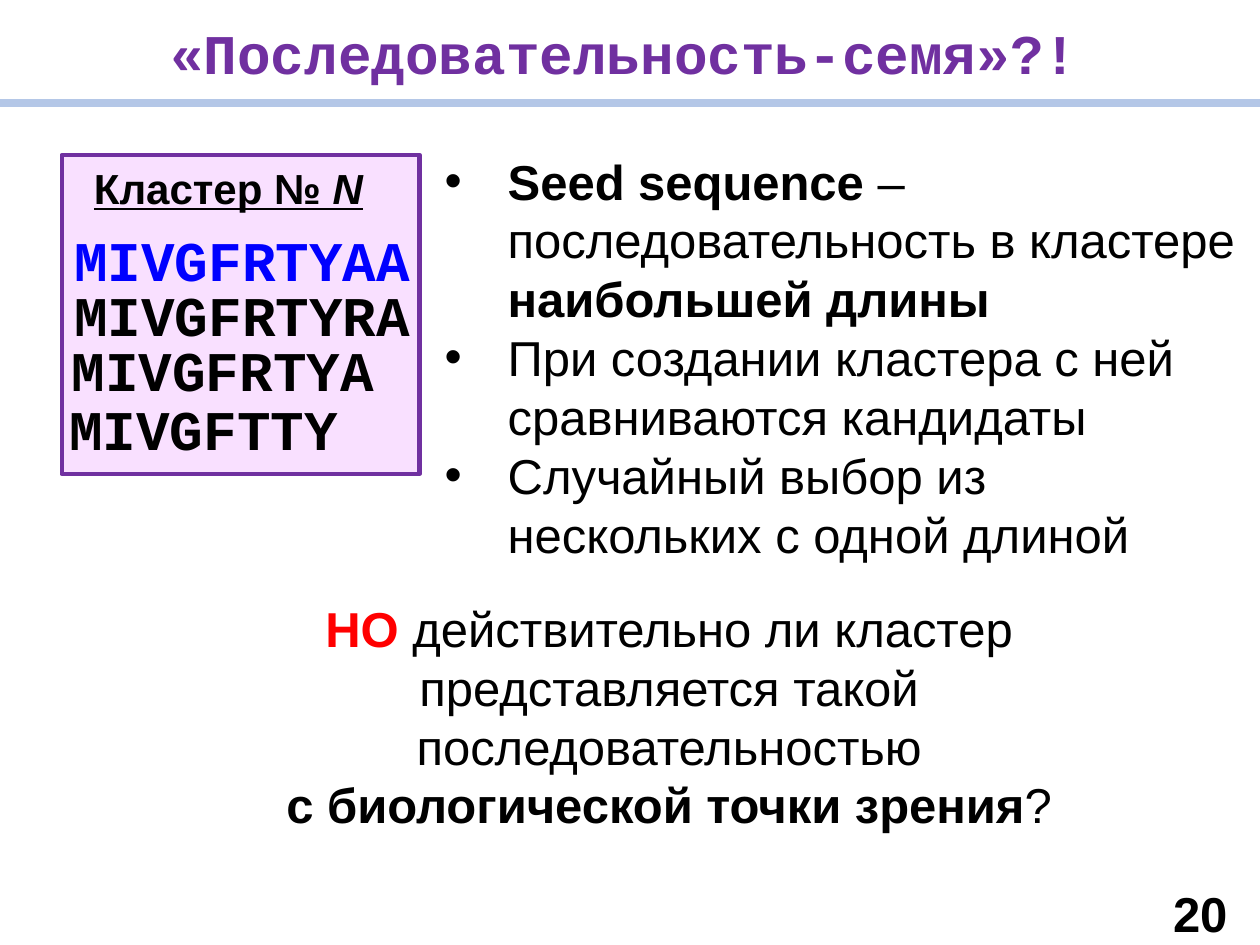
from lxml import etree
from pptx import Presentation
from pptx.dml.color import RGBColor
from pptx.enum import shapes, text
from pptx.oxml.ns import qn
from pptx.util import Pt

BLACK = RGBColor(0, 0, 0)
BLUE = RGBColor(0, 0, 0xFF)
RED = RGBColor(0xFF, 0, 0)
PURPLE = RGBColor(0x70, 0x30, 0xA0)
PINK = RGBColor(0xE2, 0x67, 0xFF)
RULE = RGBColor(0xB4, 0xC7, 0xE7)
SANS, MONO = "Arial", "Courier New"

# Content: a paragraph is a list of (text, font settings)
BOLD = {"bold": True}
TITLE = "«Последовательность-семя»?!"
HEAD = [[("Кластер № ", {}), ("N", {"italic": True})]]
SEQS = [  # text, left, top, colour
    ("MIVGFRTYAA", 35.3, 125.3, BLUE),
    ("MIVGFRTYRA", 35.3, 157, BLACK),
    ("MIVGFRTYA", 33.8, 187.9, BLACK),
    ("MIVGFTTY", 32.4, 221.8, BLACK),
]
POINTS = [
    [("Seed sequence ", BOLD), ("– последовательность в кластере ", {}),
     ("наибольшей длины", BOLD)],
    [("При создании кластера с ней сравниваются кандидаты", {})],
    [("Случайный выбор из нескольких с одной длиной", {})],
]
ASK = [
    [("НО ", {"bold": True, "color": RED}),
     ("действительно ли кластер представляется такой последовательностью", {})],
    [("с биологической точки зрения", BOLD), ("?", {})],
]
PAGE = "20"

deck = Presentation()
deck.slide_width, deck.slide_height = Pt(720), Pt(540)
slide = deck.slides.add_slide(deck.slide_layouts[6])


def add_text(paras, box, size, face=SANS, color=BLACK, bold=None,
             under=None, center=False, grow=True):
    """Add a text box; run settings override the paragraph font."""
    frame = slide.shapes.add_textbox(*map(Pt, box)).text_frame
    frame.word_wrap = True
    if grow:
        frame.auto_size = text.MSO_AUTO_SIZE.SHAPE_TO_FIT_TEXT
    for i, parts in enumerate(paras):
        para = frame.add_paragraph() if i else frame.paragraphs[0]
        para.alignment = text.PP_ALIGN.CENTER if center else text.PP_ALIGN.LEFT
        font = para.font
        font.name, font.size = face, Pt(size)
        font.bold, font.underline = bold, under
        font.color.rgb = color
        for words, style in parts:
            run = para.add_run()
            run.text = words
            for key, value in style.items():
                if key == "color":
                    run.font.color.rgb = value
                else:
                    setattr(run.font, key, value)
    return frame


def add_bullet(para, indent):
    props = para._p.get_or_add_pPr()
    props.set("marL", str(Pt(indent)))
    props.set("indent", str(-Pt(indent)))
    font = etree.Element(qn("a:buFont"), typeface=SANS)
    mark = etree.Element(qn("a:buChar"), char="•")
    props.insert(0, font)
    font.addnext(mark)


# Cluster panel
panel = slide.shapes.add_shape(shapes.MSO_SHAPE.RECTANGLE,
                               Pt(35.3), Pt(88.6), Pt(204.5), Pt(182.2))
panel.shadow.inherit = False
panel.fill.solid()
panel.fill.fore_color.rgb = PINK
tint = panel.fill._xPr.find(".//" + qn("a:srgbClr"))
etree.SubElement(tint, qn("a:alpha"), val="20000")
panel.line.color.rgb = PURPLE
panel.line.width = Pt(2.5)

# Cluster sequences and heading
for seq, left, top, color in SEQS:
    add_text([[(seq, {})]], (left, top, 209.5, 46), 32, MONO, color, bold=True)
add_text(HEAD, (44.6, 89.3, 172, 36), 24, bold=True, under=True, center=True)

# Bullet points
points = add_text(POINTS, (247, 82.8, 467.3, 244.8), 28)
for para in points.paragraphs:
    add_bullet(para, 36)

# Closing question
add_text(ASK, (139.7, 338.4, 485.3, 143.3), 28, center=True)

# Title and rule
title = add_text([[(TITLE, {})]], (0, 7.9, 713.5, 40.3), 32, MONO, PURPLE,
                 bold=True, center=True, grow=False)
title.vertical_anchor = text.MSO_ANCHOR.MIDDLE
title.margin_left = title.margin_right = title.margin_bottom = 0
title.margin_top = Pt(2.9)
rule = slide.shapes.add_connector(shapes.MSO_CONNECTOR.STRAIGHT,
                                  Pt(720), Pt(59), Pt(0), Pt(59))
rule.line.color.rgb = RULE
rule.line.width = Pt(4.75)
etree.SubElement(rule._element.spPr, qn("a:effectLst"))

# Page number
add_text([[(PAGE, {})]], (657.4, 501.1, 56.9, 38.9), 28, bold=True,
         center=True, grow=False)

deck.save("out.pptx")
